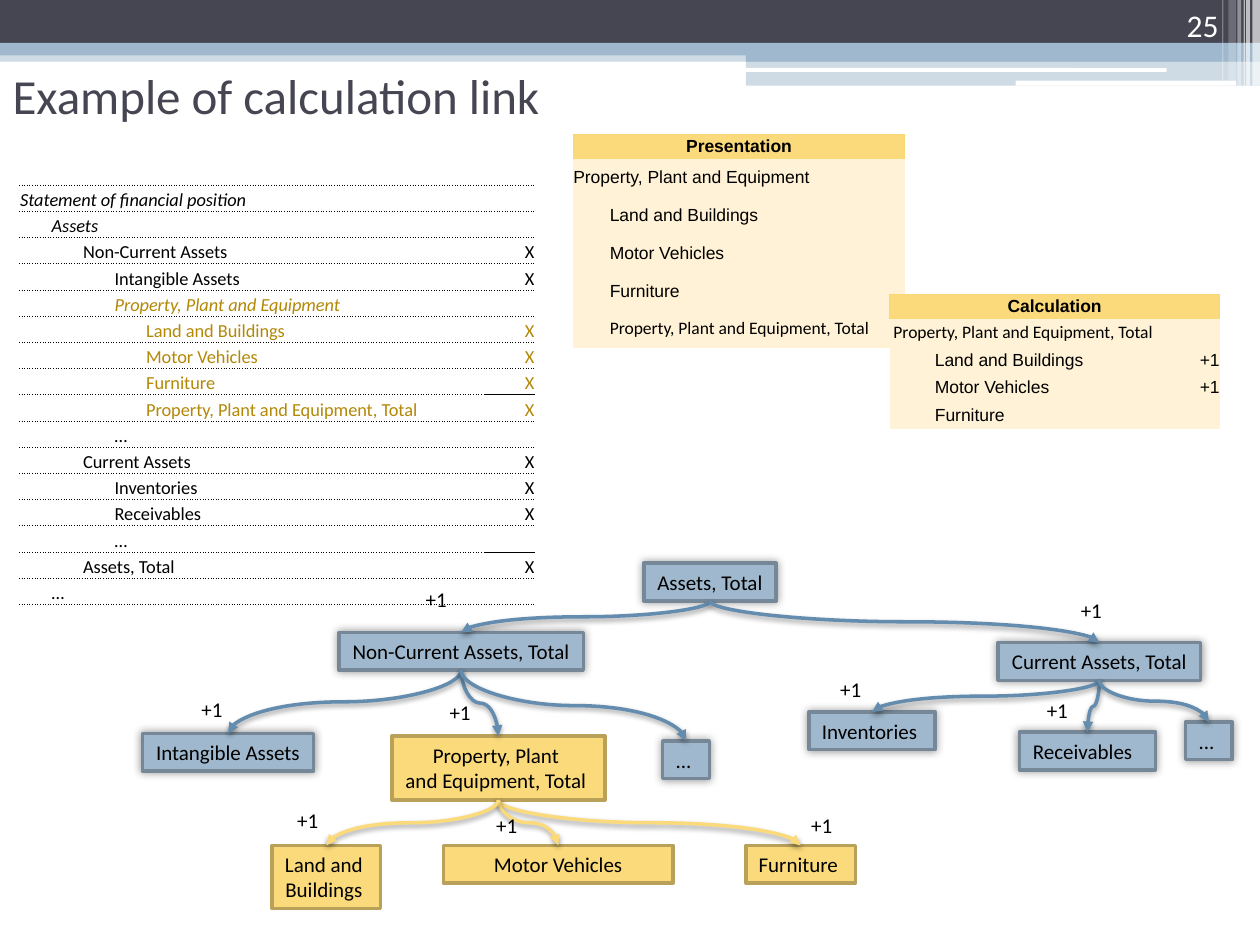
from lxml import etree
from pptx import Presentation
from pptx.dml.color import RGBColor
from pptx.enum.shapes import MSO_CONNECTOR, MSO_SHAPE
from pptx.enum.text import MSO_ANCHOR, MSO_AUTO_SIZE, PP_ALIGN
from pptx.oxml.ns import qn
from pptx.util import Inches, Pt

RECTANGLE, ROUNDED, CURVE = MSO_SHAPE.RECTANGLE, MSO_SHAPE.ROUNDED_RECTANGLE, MSO_CONNECTOR.CURVE
LEFT, CENTER, RIGHT = PP_ALIGN.LEFT, PP_ALIGN.CENTER, PP_ALIGN.RIGHT
TOP, MIDDLE, BOTTOM = MSO_ANCHOR.TOP, MSO_ANCHOR.MIDDLE, MSO_ANCHOR.BOTTOM
FIT_SHAPE = MSO_AUTO_SIZE.SHAPE_TO_FIT_TEXT
BODY, ALTERNATE = "Calibri", "Arial"
PLAIN_TABLE = "{2D5ABB26-0587-4C30-8999-92F81FD0307C}"
COLORS = {"dark": "464653", "blue": "9FB8CD", "blue_edge": "768898", "blue_line": "638CAE",
          "yellow": "FADA7A", "yellow_edge": "B9A15A", "header_edge": "F8D774", "cream": "FFF2D6",
          "gold": "B38807", "black": "000000", "white": "FFFFFF"}

BARS = [
    (0, 0.4, 10, 0.09, "blue", 50), (0, 0, 10, 0.34, "dark", 100), (0, 0.34, 10, 0.1, "blue", 100),
    (5.92, 0.39, 4.08, 0.1, "blue", 100), (5.92, 0.48, 4.08, 0.2, "blue", 50),
]
HIGHLIGHTS = [(5.91, 0.54, 3.35, 0.03), (8.06, 0.64, 1.75, 0.04)]
STRIPES = [(9.94, 0.06, 0.68, 65), (9.89, 0.03, 0.68, 65), (9.87, 0.01, 0.68, 60),
           (9.82, 0.03, 0.68, 40), (9.75, 0.06, 0.64, 20), (9.7, 0.01, 0.64, 30)]
NODES = {
    "assets": (5.11, 4.47, 1.05, 0.3, "blue", ["Assets, Total"]),
    "other": (5.26, 5.88, 0.37, 0.3, "blue", ["... "]),
    "property": (3.11, 5.84, 1.69, 0.51, "yellow", ["Property, Plant ", "and Equipment, Total "]),
    "intangible": (1.13, 5.82, 1.36, 0.3, "blue", ["Intangible Assets"]),
    "current": (7.92, 5.1, 1.61, 0.3, "blue", ["Current Assets, Total"]),
    "non_current": (2.69, 5.02, 1.94, 0.3, "blue", ["Non-Current Assets, Total"]),
    "inventories": (6.42, 5.65, 1, 0.3, "blue", ["Inventories "]),
    "receivables": (8.09, 5.81, 1.08, 0.3, "blue", ["Receivables  "]),
    "other_current": (9.41, 5.73, 0.37, 0.3, "blue", ["... "]),
    "land": (2.16, 6.71, 0.86, 0.5, "yellow", ["Land and ", "Buildings "]),
    "vehicles": (3.52, 6.71, 1.82, 0.3, "yellow", ["Motor Vehicles"]),
    "furniture": (5.92, 6.71, 0.87, 0.3, "yellow", ["Furniture "]),
}
LINKS = {
    "assets": ["non_current", "current"],
    "non_current": ["intangible", "property", "other"],
    "current": ["inventories", "receivables", "other_current"],
    "property": ["furniture", "vehicles", "land"],
}
WEIGHTS = [(2.26, 6.36), (6.34, 6.4), (6.57, 5.32), (1.5, 5.48), (3.28, 4.61), (3.47, 5.5),
           (8.48, 4.69), (8.21, 5.49), (3.84, 6.4)]
STATEMENT = [
    (0, "Statement of financial position", ""), (1, "Assets", ""), (2, "Non-Current Assets", "X"),
    (3, "Intangible Assets", "X"), (3, "Property, Plant and Equipment", ""),
    (4, "Land and Buildings", "X"), (4, "Motor Vehicles", "X"), (4, "Furniture", "X"),
    (4, "Property, Plant and Equipment, Total", "X"), (3, "…", ""), (2, "Current Assets", "X"),
    (3, "Inventories", "X"), (3, "Receivables", "X"), (3, "…", ""), (2, "Assets, Total", "X"),
    (1, "…", ""),
]
ITALIC_ROWS, GOLD_ROWS, SUBTOTAL_ROWS = (0, 1, 4), range(4, 9), (8, 14)
TOTAL = "Property, Plant and Equipment, Total"
PRESENTATION_ROWS = [(0, "Property, Plant and Equipment", ""), (1, "Land and Buildings", ""),
                     (1, "Motor Vehicles", ""), (1, "Furniture", ""), (1, TOTAL, "")]
CALCULATION_ROWS = [(0, " " + TOTAL, ""), (1, "Land and Buildings", "+1"),
                    (1, "Motor Vehicles", "+1"), (1, "Furniture", "")]


def rgb(name):
    return RGBColor.from_string(COLORS[name])


def add_xml(parent, tag, **attributes):
    return etree.SubElement(parent, qn(tag), attributes)


class SlideBuilder:
    """Draws styled elements on the current slide."""

    def __init__(self, slide):
        self.slide = slide

    def add_lines(self, frame, lines, size=12, color="black", align=LEFT, font=BODY, bold=False,
                  italic=False):
        for index, line in enumerate(lines):
            paragraph = frame.add_paragraph() if index else frame.paragraphs[0]
            paragraph.alignment = align
            run = paragraph.add_run()
            run.text = line
            run.font.size, run.font.name = Pt(size), font
            run.font.bold, run.font.italic = bold, italic
            run.font.color.rgb = rgb(color)

    def title(self, text, box):
        title = self.slide.shapes.title
        title.left, title.top, title.width, title.height = map(Inches, box)
        title.text_frame.vertical_anchor = MIDDLE
        self.add_lines(title.text_frame, [text], 28, "dark")

    def text(self, text, box, anchor=TOP, wrap=False, **style):
        frame = self.slide.shapes.add_textbox(*map(Inches, box)).text_frame
        frame.word_wrap, frame.vertical_anchor = wrap, anchor
        self.add_lines(frame, [text], **style)

    def bar(self, box, color, opacity=100, kind=RECTANGLE):
        shape = self.slide.shapes.add_shape(kind, *map(Inches, box))
        shape.shadow.inherit = False
        shape.fill.solid()
        shape.fill.fore_color.rgb = rgb(color)
        shape.line.fill.background()
        if opacity < 100:
            fill_color = shape._element.spPr.find(qn("a:solidFill"))[0]
            add_xml(fill_color, "a:alpha", val=str(opacity * 1000))
        return shape

    def shadow(self, effects, blur, distance, opacity):
        shadow = add_xml(effects, "a:outerShdw", blurRad=str(Pt(blur)), dist=str(Pt(distance)),
                         dir="5400000", rotWithShape="0")
        add_xml(add_xml(shadow, "a:srgbClr", val=COLORS["black"]), "a:alpha",
                val=str(opacity * 1000))

    def node(self, box, color, lines):
        shape = self.bar(box, color)
        shape.line.color.rgb = rgb(color + "_edge")
        shape.line.width = Pt(2)
        if color == "blue":
            self.shadow(shape._element.spPr.find(qn("a:effectLst")), 5, 0, 40)
        frame = shape.text_frame
        frame.word_wrap, frame.vertical_anchor = False, MIDDLE
        frame.auto_size = FIT_SHAPE
        self.add_lines(frame, lines, align=CENTER)
        return shape

    def link(self, parent, child, color):
        start_x, start_y = parent.left + parent.width // 2, parent.top + parent.height
        end_x, end_y = child.left + child.width // 2, child.top
        connector = self.slide.shapes.add_connector(CURVE, start_x, start_y, end_x, end_y)
        connector.begin_connect(parent, 2)
        connector.end_connect(child, 0)
        rise, run = end_y - start_y, abs(end_x - start_x)
        connector.left = (start_x + end_x - rise) // 2
        connector.top = (start_y + end_y - run) // 2
        connector.width, connector.height = rise, run
        rightward = end_x > start_x
        properties = connector._element.spPr
        frame = properties.find(qn("a:xfrm"))
        frame.set("rot", "16200000" if rightward else "5400000")
        frame.set("flipH", "1" if rightward else "0")
        frame.set("flipV", "0")
        connector.line.color.rgb = rgb(color)
        connector.line.width = Pt(2)
        add_xml(properties.find(qn("a:ln")), "a:tailEnd", type="triangle")
        self.shadow(add_xml(properties, "a:effectLst"), 3.1, 1.6, 38)

    def table(self, left, top, columns, rows, size, fill=None, margin=0, anchor=MIDDLE):
        frame = self.slide.shapes.add_table(len(rows), len(columns), Inches(left), Inches(top),
                                            Inches(sum(columns)), Inches(sum(rows)))
        table = frame.table
        table.first_row = table.horz_banding = False
        table._tbl.tblPr.find(qn("a:tableStyleId")).text = PLAIN_TABLE
        for column, width in zip(table.columns, columns):
            column.width = Inches(width)
        for row, height in zip(table.rows, rows):
            row.height = Inches(height)
        for cell in table.iter_cells():
            cell.margin_left = cell.margin_right = cell.margin_top = Inches(margin)
            cell.margin_bottom = 0
            cell.vertical_anchor = anchor
            cell.text_frame.paragraphs[0]._p.get_or_add_endParaRPr().set("sz", str(int(size * 100)))
            if fill:
                cell.fill.solid()
                cell.fill.fore_color.rgb = rgb(fill)
            else:
                cell.fill.background()
        return table

    def borders(self, cell, color, width, **dashes):
        properties = cell._tc.get_or_add_tcPr()
        for index, (side, dash) in enumerate(dashes.items()):
            line = etree.Element(qn("a:ln" + side), w=str(Pt(width)))
            add_xml(add_xml(line, "a:solidFill"), "a:srgbClr", val=COLORS[color])
            add_xml(line, "a:prstDash", val=dash)
            properties.insert(index, line)

    def statement(self):
        table = self.table(0.15, 1.47, [0.25] * 5 + [2.44, 0.41], [3.33 / 16] * 16, 10.5,
                           margin=0.01, anchor=BOTTOM)
        for index, (level, label, amount) in enumerate(STATEMENT):
            color = "gold" if index in GOLD_ROWS else "black"
            for column in range(7):
                top, bottom = ("solid" if column == 6 and row in SUBTOTAL_ROWS else "sysDot"
                               for row in (index, index + 1))
                self.borders(table.cell(index, column), "black", 0.5, T=top, B=bottom)
            cell = table.cell(index, level)
            if label != "…":
                cell.merge(table.cell(index, 5))
            self.add_lines(cell.text_frame, [label], 10.5, color, italic=index in ITALIC_ROWS)
            if amount:
                self.add_lines(table.cell(index, 6).text_frame, [amount], 10.5, color, RIGHT)

    def link_table(self, heading, left, top, columns, row_height, rows):
        table = self.table(left, top, columns, [0.19] + [row_height] * len(rows), 10, "cream")
        header = table.cell(0, 0)
        for column in range(3):
            table.cell(0, column).fill.fore_color.rgb = rgb("yellow")
        header.merge(table.cell(0, 2))
        self.borders(header, "header_edge", 0.75, L="solid", R="solid", T="solid")
        self.add_lines(header.text_frame, [heading], 10, align=CENTER, font=ALTERNATE, bold=True)
        for index, (level, label, weight) in enumerate(rows, 1):
            cell = table.cell(index, level)
            if level == 0:
                cell.merge(table.cell(index, 1))
            font = BODY if TOTAL in label else ALTERNATE
            self.add_lines(cell.text_frame, [label], 10, font=font)
            if weight:
                self.add_lines(table.cell(index, 2).text_frame, [weight], 10, align=RIGHT,
                               font=ALTERNATE)


def main():
    presentation = Presentation()
    presentation.slide_width, presentation.slide_height = Inches(10), Inches(7.5)
    builder = SlideBuilder(presentation.slides.add_slide(presentation.slide_layouts[5]))
    for *box, color, opacity in BARS:
        builder.bar(box, color, opacity)
    for box in HIGHLIGHTS:
        builder.bar(box, "white", kind=ROUNDED)
    for left, width, height, opacity in STRIPES:
        builder.bar((left, 0, width, height), "white", opacity)
    builder.title("Example of calculation link", (0, 0.21, 9, 1.09))
    builder.text("25", (8.94, 0, 0.83, 0.4), BOTTOM, True, size=18, color="white", align=RIGHT)
    nodes = {name: builder.node(box, color, lines) for name, (*box, color, lines) in NODES.items()}
    for parent, children in LINKS.items():
        for child in children:
            color = "yellow" if parent == "property" else "blue_line"
            builder.link(nodes[parent], nodes[child], color)
    for left, top in WEIGHTS:
        builder.text("+1", (left, top, 0.37, 0.3))
    builder.link_table("Presentation", 4.55, 1.07, [0.29, 2.27, 0.07], 0.3, PRESENTATION_ROWS)
    builder.statement()
    builder.link_table("Calculation", 7.06, 2.34, [0.36, 1.98, 0.28], 0.22, CALCULATION_ROWS)
    presentation.save("out.pptx")


if __name__ == "__main__":
    main()
